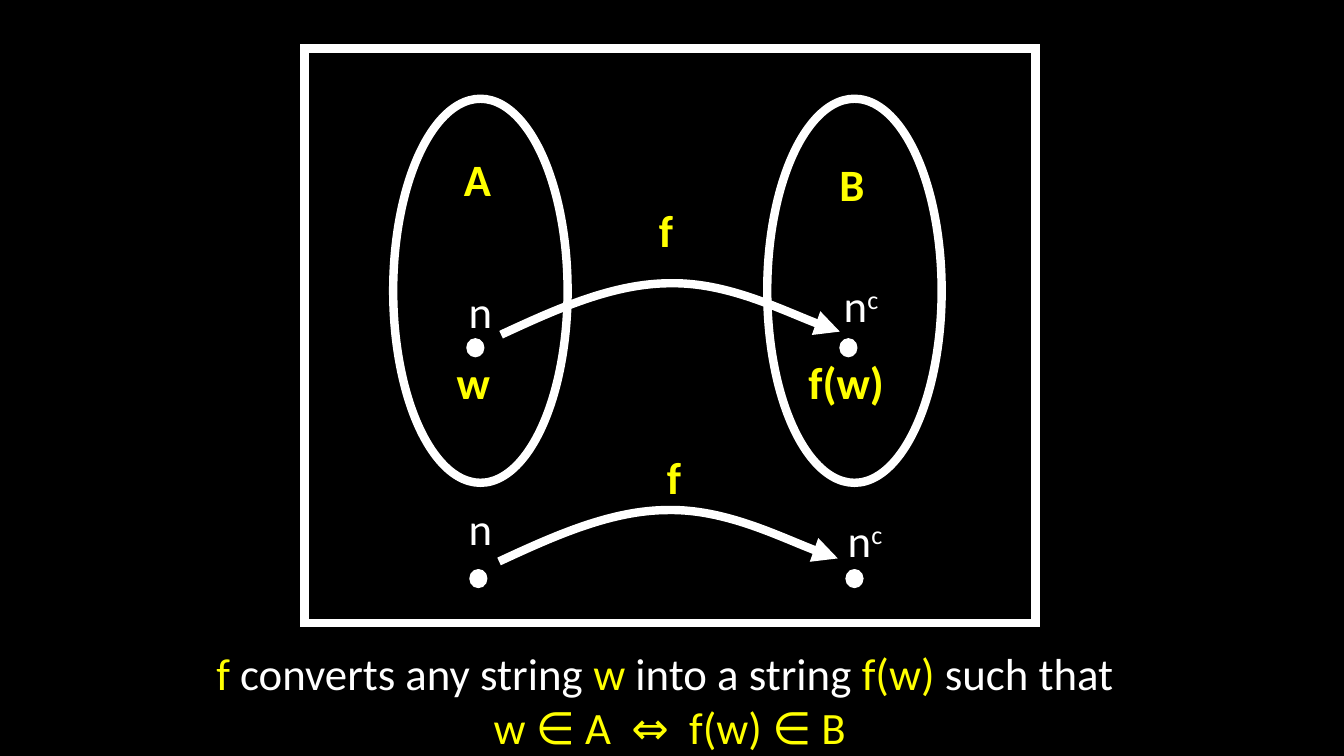
from lxml import etree
from pptx import Presentation
from pptx.dml.color import RGBColor
from pptx.enum.shapes import MSO_SHAPE
from pptx.enum.text import MSO_AUTO_SIZE, PP_ALIGN
from pptx.oxml.ns import qn
from pptx.util import Inches, Pt

OVAL, RECT = MSO_SHAPE.OVAL, MSO_SHAPE.RECTANGLE
LEFT, CENTER = PP_ALIGN.LEFT, PP_ALIGN.CENTER
GROW = MSO_AUTO_SIZE.SHAPE_TO_FIT_TEXT
COLORS = {"back": "000000", "plain": "FFFFFF", "key": "FFFF00"}
BREAK = "\n"


class Board:
    font, size, thick, thin = "Calibri", 32, 6, 0.75

    def __init__(self, deck):
        self.slide = deck.slides.add_slide(deck.slide_layouts[6])
        self.shapes = self.slide.shapes
        self.paint(self.slide.background.fill, "back")

    def paint(self, fill, color):
        fill.solid()
        fill.fore_color.rgb = RGBColor.from_string(COLORS[color])

    def draw(self, shape, width, fill=None):
        """Give a shape its outline and, if named, its fill."""
        shape.shadow.inherit = False
        if fill:
            self.paint(shape.fill, fill)
        else:
            shape.fill.background()
        self.paint(shape.line.fill, "plain")
        shape.line.width = Pt(width)

    def ring(self, kind, *box):
        shape = self.shapes.add_shape(kind, *map(Inches, box))
        self.draw(shape, self.thick)
        join = etree.SubElement(shape.line.fill._xPr, qn("a:miter"))
        join.set("lim", "800000")

    def dot(self, left, top):
        box = map(Inches, (left, top, 0.17, 0.18))
        self.draw(self.shapes.add_shape(OVAL, *box), self.thin, "plain")

    def arrow(self, points):
        """Draw a curved arrow from a start and Bezier point triples."""
        spots = [(Inches(x), Inches(y)) for x, y in points]
        form = self.shapes.build_freeform(*spots[0])
        form.add_line_segments(spots[1:], close=False)
        shape = form.convert_to_shape()
        self.draw(shape, self.thick)
        steps = list(shape._element.iter(qn("a:lnTo")))
        for i in range(0, len(steps), 3):
            curve = etree.Element(qn("a:cubicBezTo"))
            steps[i].addprevious(curve)
            for step in steps[i:i + 3]:
                curve.append(step[0])
                step.getparent().remove(step)
        tail = etree.SubElement(shape.line.fill._xPr, qn("a:tailEnd"))
        tail.set("type", "triangle")

    def text(self, box, parts, align=LEFT, bold=False, wrap=True):
        """Write (words, color) parts as one paragraph."""
        frame = self.shapes.add_textbox(*map(Inches, box)).text_frame
        frame.word_wrap = wrap
        frame.auto_size = GROW
        para = frame.paragraphs[0]
        para.alignment = align
        para.font.name, para.font.size = self.font, Pt(self.size)
        para.font.bold = bold
        for words, color in parts:
            if words == BREAK:
                para.add_line_break()
                continue
            run = para.add_run()
            run.text = words
            self.paint(run.font.fill, color)
        return para

    def label(self, words, left, top, width):
        box = (left, top, width, 0.61)
        self.text(box, [(words, "key")], CENTER, True, False)

    def word(self, words, left, width):
        self.text((left, 3.47, width, 0.61), [(words, "key")], bold=True)

    def node(self, left, top, power=""):
        parts = [(words, "plain") for words in ("n", power) if words]
        para = self.text((left, top, 0.87, 0.61), parts)
        for run in para.runs[1:]:
            run.font._element.set("baseline", "30000")


def main():
    deck = Presentation()
    deck.slide_width, deck.slide_height = Inches(13.33), Inches(7.5)
    board = Board(deck)

    board.text((0.23, 6.36, 12.83, 1.12), [
        ("f", "key"), (" converts any string ", "plain"), ("w", "key"),
        (" into a string ", "plain"), ("f(w)", "key"),
        (" such that ", "plain"), (BREAK, "plain"),
        ("w ∈ A  ⇔  f(w) ∈ B", "key")], CENTER)

    for left in (3.9, 7.61):
        board.ring(OVAL, left, 0.98, 1.73, 3.81)
    board.ring(RECT, 3.02, 0.48, 7.25, 5.7)

    for spot in ((4.63, 3.36), (8.33, 3.36), (4.66, 5.65), (8.39, 5.65)):
        board.dot(*spot)

    curve = [(4.97, 3.32), (5.53, 3.06), (6.09, 2.81), (6.65, 2.81),
             (7.21, 2.8), (8.05, 3.21), (8.33, 3.29)]
    for right, down in ((0, 0), (-0.02, 2.25)):
        board.arrow([(x + right, y + down) for x, y in curve])

    board.label("A", 4.48, 1.46, 0.51)
    board.label("B", 8.22, 1.51, 0.46)
    board.label("f", 6.43, 1.96, 0.35)
    board.label("f", 6.51, 4.41, 0.35)
    board.word("w", 4.43, 0.56)
    board.word("f(w)", 7.92, 1.3)
    board.node(4.55, 2.77)
    board.node(8.27, 2.71, "c")
    board.node(4.55, 4.92)
    board.node(8.31, 5.04, "c")

    deck.save("out.pptx")


if __name__ == "__main__":
    main()
